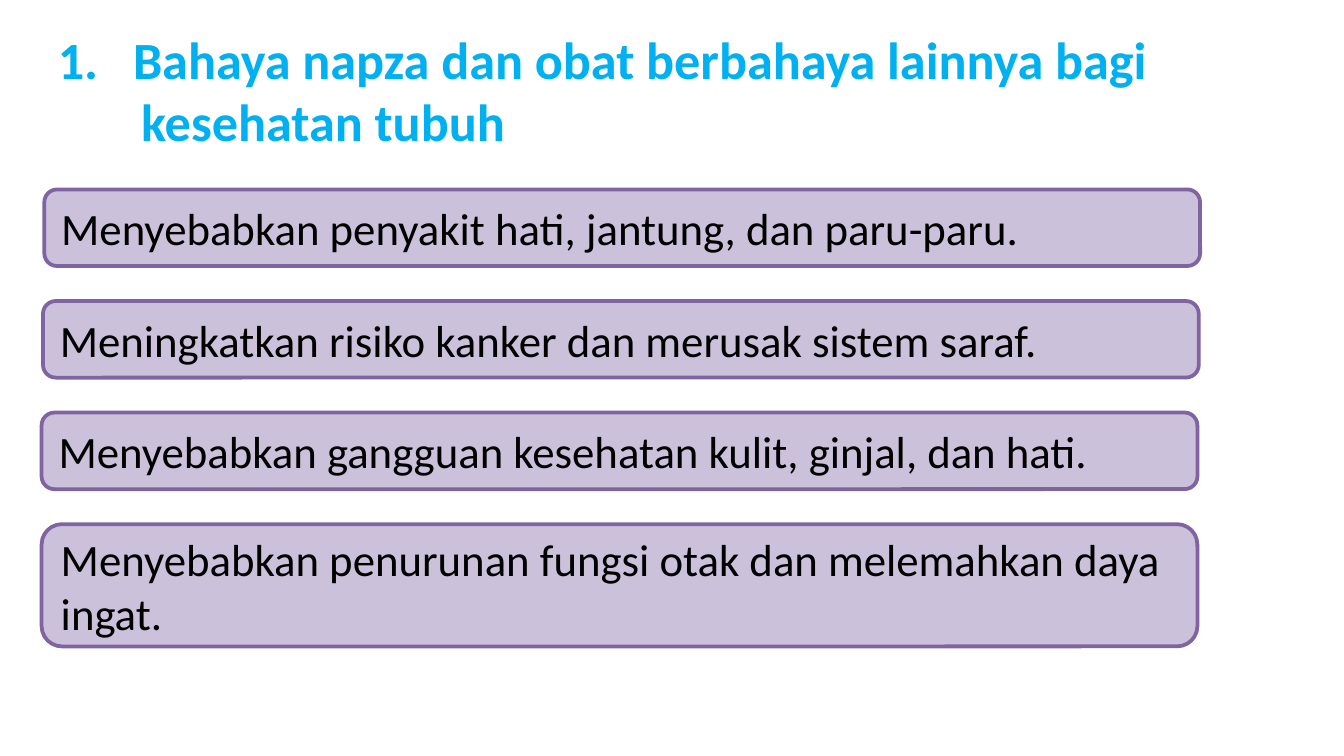
"""Build a slide listing the dangers of drugs for bodily health."""
from lxml.etree import SubElement
from pptx import Presentation
from pptx.dml.color import RGBColor
from pptx.enum.shapes import MSO_SHAPE as Preset
from pptx.enum.text import MSO_ANCHOR as Anchor, MSO_AUTO_SIZE as AutoSize, PP_ALIGN as Align
from pptx.oxml.ns import qn
from pptx.util import Inches, Pt

HEADING = [
    ("Bahaya napza dan obat berbahaya lainnya bagi", 0.56, -0.56),
    ("kesehatan tubuh", 0.62, 0),
]
DANGERS = [
    ("Menyebabkan penyakit hati, jantung, dan paru-paru.", 0.33, 0.57),
    ("Meningkatkan risiko kanker dan merusak sistem saraf.", 0.32, 0.57),
    ("Menyebabkan gangguan kesehatan kulit, ginjal, dan hati.", 0.31, 0.57),
    ("Menyebabkan penurunan fungsi otak dan melemahkan daya ingat.", 0.31, 0.91),
]
COLORS = {"heading": "00B0F0", "panel": "CCC1DA", "border": "8064A2", "text": "000000"}
FIRST_TOP, PITCH, PANEL_WIDTH = 1.41, 0.83, 8.6


def color(name):
    return RGBColor.from_string(COLORS[name])


def style(paragraph, size, color_name, bold=False):
    paragraph.alignment = Align.LEFT
    font = paragraph.font
    font.name, font.size, font.bold = "Calibri", Pt(size), bold
    font.color.rgb = color(color_name)


def add_heading(slide):
    title = slide.shapes.title
    title.left, title.top, title.width, title.height = map(Inches, (0.33, 0.15, 8.49, 1.04))
    frame = title.text_frame
    frame.auto_size, frame.vertical_anchor = AutoSize.NONE, Anchor.TOP
    frame.text = "\n".join(text for text, _, _ in HEADING)
    for paragraph, (_, margin, indent) in zip(frame.paragraphs, HEADING):
        properties = paragraph._p.get_or_add_pPr()
        properties.set("marL", str(Inches(margin)))
        properties.set("indent", str(Inches(indent)))
        if indent:
            SubElement(properties, qn("a:buFont"), typeface="+mj-lt")
            SubElement(properties, qn("a:buAutoNum"), type="arabicPeriod")
        style(paragraph, 28, "heading", bold=True)


def add_danger(slide, row, text, left, height):
    top = FIRST_TOP + row * PITCH
    panel = slide.shapes.add_shape(
        Preset.ROUNDED_RECTANGLE, *map(Inches, (left, top, PANEL_WIDTH, height)))
    panel.shadow.inherit = False
    panel.fill.solid()
    panel.fill.fore_color.rgb = color("panel")
    panel.line.color.rgb = color("border")
    panel.line.width = Pt(2)
    frame = panel.text_frame
    frame.word_wrap, frame.vertical_anchor = True, Anchor.MIDDLE
    frame.text = text
    style(frame.paragraphs[0], 24, "text")


def main():
    deck = Presentation()
    deck.slide_width = Inches(10)
    deck.slide_height = deck.slide_width * 9 // 16
    slide = deck.slides.add_slide(deck.slide_layouts[5])
    add_heading(slide)
    for row, danger in enumerate(DANGERS):
        add_danger(slide, row, *danger)
    deck.save("out.pptx")


if __name__ == "__main__":
    main()
